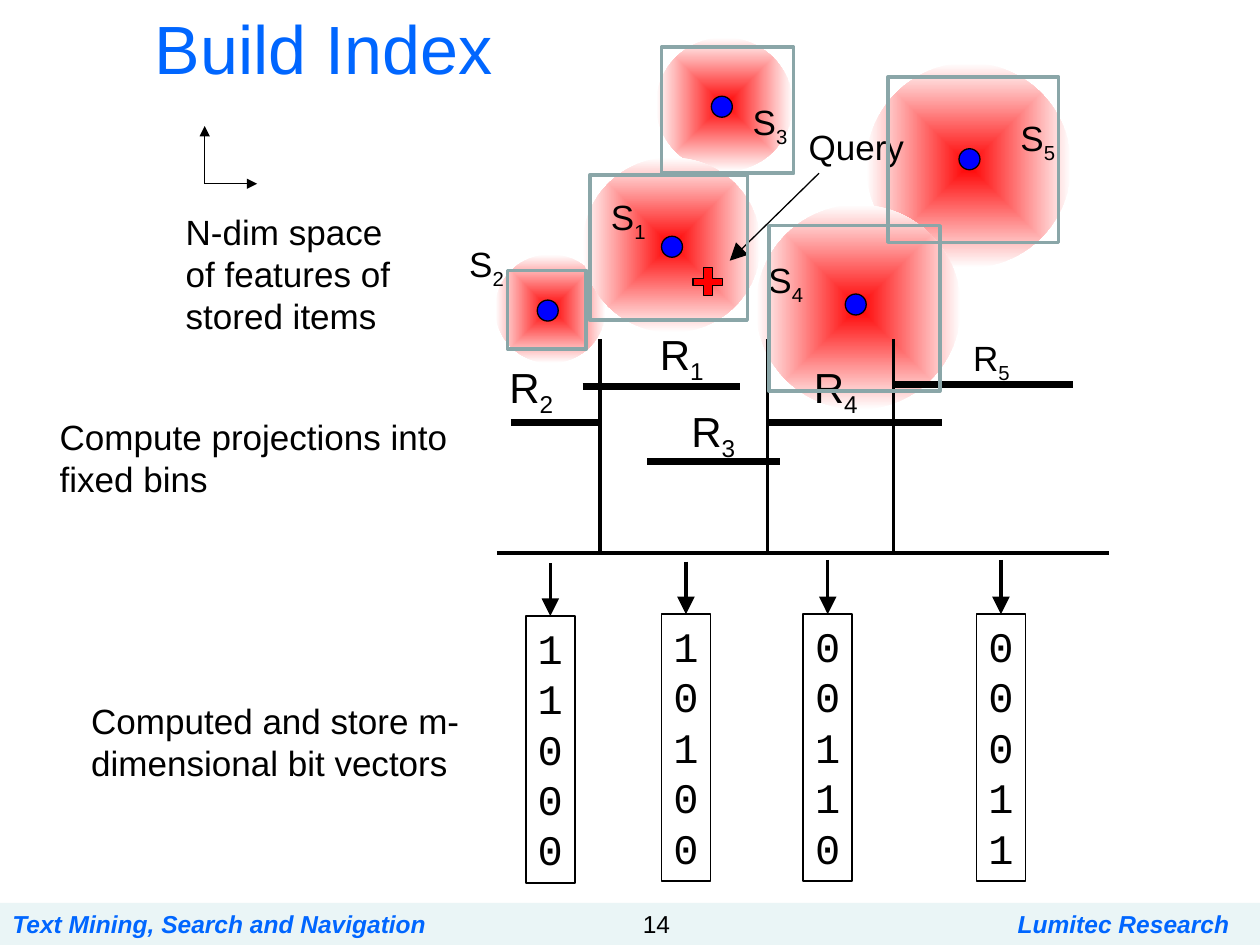
"""Build the slide that shows how region projections become an index of bit vectors."""
from lxml.etree import SubElement
from pptx import Presentation
from pptx.dml.color import RGBColor
from pptx.enum.shapes import MSO_CONNECTOR as LINE, MSO_SHAPE as SHAPE
from pptx.enum.text import MSO_ANCHOR as ANCHOR, PP_ALIGN as ALIGN
from pptx.oxml.ns import qn
from pptx.util import Pt

BLACK, BLUE, RED, GREY = "000000", "0066FF", "FF0000", "8AA6A8"


def rgb(code):
    return RGBColor.from_string(code)


def add_text(text, x, y, w, h, sub="", size=20, font="Arial", color=BLACK, bold=False,
             align=ALIGN.LEFT, anchor=ANCHOR.TOP, wrap=True, left=7.2, right=7.2):
    s = sp.add_textbox(Pt(x), Pt(y), Pt(w), Pt(h))
    tf = s.text_frame
    tf.word_wrap, tf.vertical_anchor = wrap, anchor
    tf.margin_left, tf.margin_right = Pt(left), Pt(right)
    for i, row in enumerate(text.split("\n")):
        p = tf.paragraphs[0] if i == 0 else tf.add_paragraph()
        p.alignment = align
        for part in filter(None, (row, sub)):
            r = p.add_run()
            r.text = part
            r.font.name, r.font.size = font, Pt(size)
            r.font.bold = r.font.italic = bold
            r.font.color.rgb = rgb(color)
        if sub:
            r.font._element.set("baseline", "-25000")
    return s


prs = Presentation()
prs.slide_width, prs.slide_height = Pt(720), Pt(540)
sp = prs.slides.add_slide(prs.slide_layouts[6]).shapes

s = sp.add_shape(SHAPE.RECTANGLE, Pt(0), Pt(516), Pt(720), Pt(24))
s.shadow.inherit = False
s.line.fill.background()
s.fill.solid()
s.fill.fore_color.rgb = rgb("BBE0E3")
SubElement(s.fill._xPr.find(".//" + qn("a:srgbClr")), qn("a:alpha"), val="30000")

for text, x, w, color, bold, align in [
    ("Text Mining, Search and Navigation", 0, 252, BLUE, True, ALIGN.LEFT),
    ("14", 342, 48, BLACK, False, ALIGN.RIGHT),
    ("Lumitec Research", 564, 156, BLUE, True, ALIGN.CENTER),
]:
    add_text(text, x, 516, w, 24, size=14, color=color, bold=bold, align=align)

add_text("Build Index", 27, 0, 678, 54, size=39, color=BLUE, anchor=ANCHOR.MIDDLE,
         left=61.4)

for x, y, w, h in [(495, 36, 117, 117), (432, 117, 117, 117), (375, 21.5, 78, 76.5),
                   (283, 145.5, 63, 62), (333, 90, 101.5, 100)]:
    s = sp.add_shape(SHAPE.OVAL, Pt(x), Pt(y), Pt(w), Pt(h))
    s.shadow.inherit = False
    s.line.fill.background()
    s.fill.gradient()
    for stop, color in zip(s.fill.gradient_stops, (RED, "FFFFFF")):
        stop.color.rgb = rgb(color)
    grad = s.fill._xPr.find(qn("a:gradFill"))
    grad.remove(grad.find(qn("a:lin")))
    SubElement(SubElement(grad, qn("a:path"), path="shape"), qn("a:fillToRect"),
               l="50000", t="50000", r="50000", b="50000")

for kind, x, y, w, h, color in [
    *((SHAPE.OVAL, x, y, 12, 12, "0000FF") for x, y in
      [(378, 135), (307, 171.5), (406.5, 55), (483, 168), (548, 85)]),
    (SHAPE.CROSS, 396, 153, 17, 16, RED),
]:
    s = sp.add_shape(kind, Pt(x), Pt(y), Pt(w), Pt(h))
    if kind == SHAPE.CROSS:
        s.adjustments[0] = 0.375
    s.shadow.inherit = False
    s.fill.solid()
    s.fill.fore_color.rgb = rgb(color)
    s.line.color.rgb = rgb(BLACK)
    s.line.width = Pt(0.75)

arrows = []
for bits, x, y, start in [("11000", 300.5, 352, 322), ("10100", 378, 351, 321),
                          ("00110", 459, 351, 320), ("00011", 558, 351, 320)]:
    s = add_text("\n".join(bits), x, y, 28, 152.6, size=24, font="Courier New",
                 align=ALIGN.CENTER, wrap=False, left=0, right=0)
    s.line.color.rgb = rgb(BLACK)
    s.line.width = Pt(1)
    arrows.append((x + 14, start, x + 14, y, 2, "lg", s))

for x1, y1, x2, y2, width, head, target in [
    (468, 99, 417, 149, 0.75, "lg", None),
    (117, 105, 117, 72, 0.75, "med", None),
    (117, 105, 147, 105, 0.75, "med", None),
    (284, 316, 633.5, 316, 2, None, None),
    *((x, 194, x, 316, 2, None, None) for x in (343, 438.5, 510.5)),
    *((x1, y, x2, y, 4, None, None) for x1, x2, y in
      [(333, 423, 221), (292, 343, 241.5), (370, 446, 264),
       (438.5, 538.5, 241.5), (510.5, 613, 220)]),
    *arrows,
]:
    s = sp.add_connector(LINE.STRAIGHT, Pt(x1), Pt(y1), Pt(x2), Pt(y2))
    s.line.color.rgb = rgb(BLACK)
    s.line.width = Pt(width)
    SubElement(s._element.spPr, qn("a:effectLst"))
    if head:
        SubElement(s.line._ln, qn("a:tailEnd"), type="triangle", w=head, len=head)
    if target:
        s.end_connect(target, 0)

for name, sub, x, y, w, h, size in [
    ("S", "1", 342, 108, 35, 31.5, 20), ("S", "2", 261, 135, 35, 31.5, 20),
    ("S", "3", 423, 54, 48, 31.5, 20), ("S", "4", 432, 144, 35, 31.5, 20),
    ("S", "5", 576, 63, 35, 31.5, 20), ("Query", "", 455, 68, 69, 31.5, 20),
    ("R", "1", 370, 184, 41, 36, 24), ("R", "2", 284, 203, 41, 36, 24),
    ("R", "3", 388, 228, 41, 36, 24), ("R", "4", 458, 203, 51, 36, 24),
    ("R", "5", 549, 189, 52, 31, 20),
]:
    add_text(name, x, y, w, h, sub=sub, size=size, wrap=w > 41 and name != "Query")

for text, x, y, w, h in [
    ("N-dim space of features of stored items", 99, 117, 137, 80),
    ("Compute projections into fixed bins", 27, 234, 243, 55.5),
    ("Computed and store m-dimensional bit vectors", 45, 396, 243, 55.5),
]:
    add_text(text, x, y, w, h)

for x, y, w, h in [(290, 154.5, 45, 45), (337, 100, 90, 83), (378, 27, 75.5, 72),
                   (439.5, 129, 97.5, 94.5), (507.5, 44, 97.5, 94.5)]:
    s = sp.add_shape(SHAPE.FLOWCHART_PROCESS, Pt(x), Pt(y), Pt(w), Pt(h))
    s.shadow.inherit = False
    s.fill.background()
    s.line.color.rgb = rgb(GREY)
    s.line.width = Pt(2)

prs.save("out.pptx")
